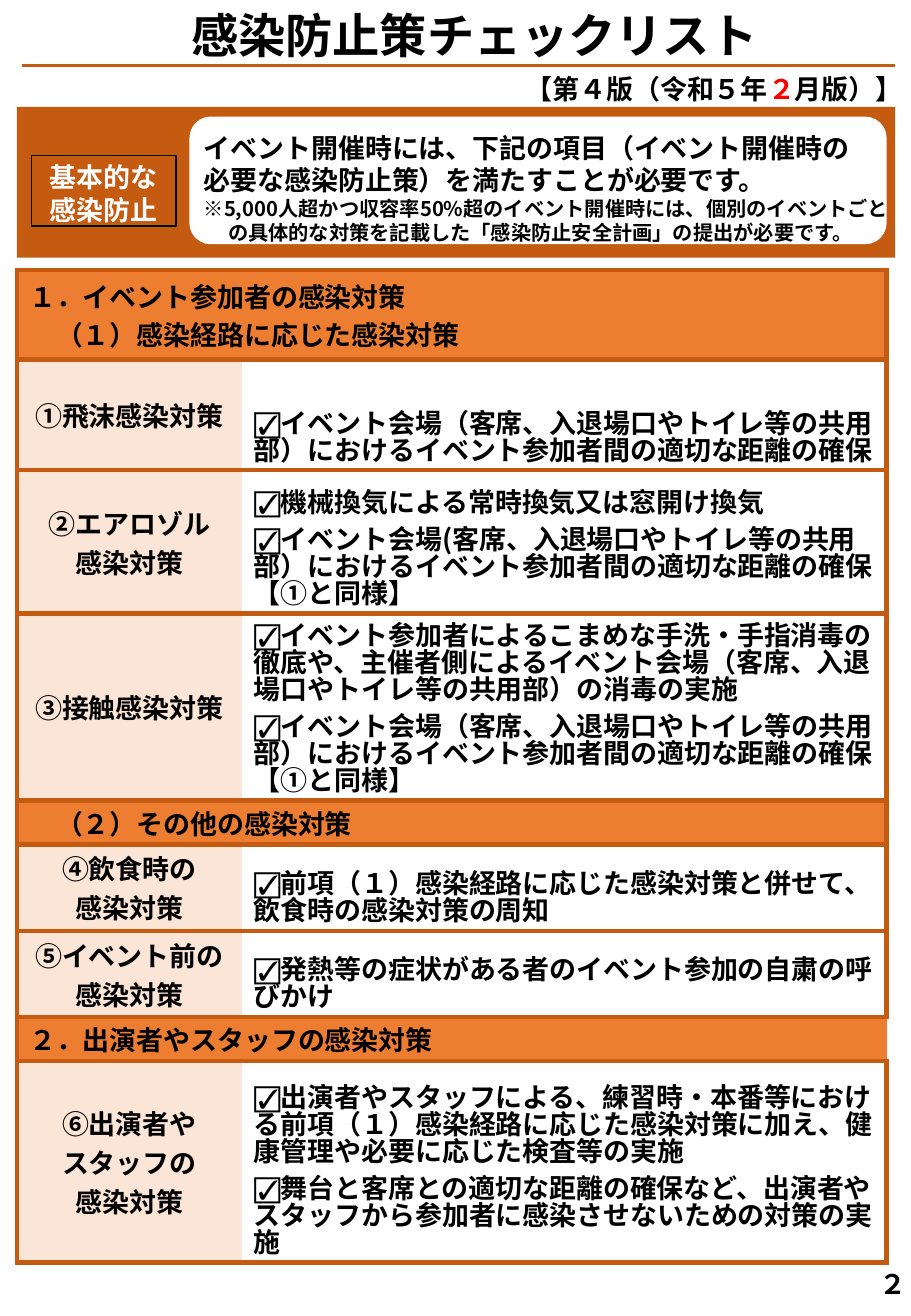
from lxml.etree import SubElement
from pptx import Presentation
from pptx.dml.color import RGBColor
from pptx.enum.shapes import MSO_CONNECTOR, MSO_SHAPE
from pptx.enum.text import MSO_ANCHOR, PP_ALIGN
from pptx.oxml.ns import qn
from pptx.util import Inches, Pt

FONT = "Noto Sans CJK JP"
BLACK = RGBColor(0x00, 0x00, 0x00)
WHITE = RGBColor(0xFF, 0xFF, 0xFF)
RED = RGBColor(0xFF, 0x00, 0x00)
BROWN = RGBColor(0xC5, 0x5A, 0x11)
ORANGE = RGBColor(0xED, 0x7D, 0x31)
PEACH = RGBColor(0xFB, 0xE5, 0xD6)

CENTRED = {"alignment": PP_ALIGN.CENTER}
TIGHT = {"line_spacing": Pt(19.3)}
MEASURE = {"line_spacing": Pt(16), "space_after": Pt(6)}


def add_para(frame, spans, formats, size=16, color=BLACK):
    """Append a paragraph; spans is a string or a list of (text, color)."""
    para = frame.paragraphs[0]
    if para.runs:
        para = frame.add_paragraph()
    for name, value in formats.items():
        setattr(para, name, value)
    if isinstance(spans, str):
        spans = [(spans, color)]
    for text, span_color in spans:
        span = para.add_run()
        span.text = text
        for name, value in {"name": FONT, "size": Pt(size), "bold": True}.items():
            setattr(span.font, name, value)
        span.font.color.rgb = span_color
        SubElement(span.font._element, qn("a:ea"), typeface=FONT)
    return para


def style_cell(cell, fill, sides, anchor=MSO_ANCHOR.MIDDLE):
    """Fill a cell and rule the named sides (letters of LRTB)."""
    cell.vertical_anchor = anchor
    cell.margin_top = cell.margin_bottom = Inches(0.02)
    properties = cell._tc.get_or_add_tcPr()
    for side in "LRTB":
        line = SubElement(properties, qn(f"a:ln{side}"), w=str(Pt(3)))
        if side in sides:
            solid = SubElement(line, qn("a:solidFill"))
            SubElement(solid, qn("a:srgbClr"), val=str(BROWN))
        else:
            SubElement(line, qn("a:noFill"))
    cell.fill.solid()
    cell.fill.fore_color.rgb = fill


deck = Presentation()
deck.slide_width, deck.slide_height = Inches(7.5), Inches(10.83)
page = deck.slides.add_slide(deck.slide_layouts[6])

# Checklist tables: top, then rows of (height, heading or label lines, measures)
tables = [
    (2.22, [
        (0.74, ["１．イベント参加者の感染対策", "　（１）感染経路に応じた感染対策"], []),
        (0.91, ["①飛沫感染対策"], [
            "☑イベント会場（客席、入退場口やトイレ等の共用部）におけるイベント参加者間の適切な距離の確保"]),
        (1.18, ["②エアロゾル", "感染対策"], [
            "☑機械換気による常時換気又は窓開け換気",
            "☑イベント会場(客席、入退場口やトイレ等の共用部）におけるイベント参加者間の適切な距離の確保【①と同様】"]),
        (1.54, ["③接触感染対策"], [
            "☑イベント参加者によるこまめな手洗・手指消毒の徹底や、主催者側によるイベント会場（客席、入退場口やトイレ等の共用部）の消毒の実施",
            "☑イベント会場（客席、入退場口やトイレ等の共用部）におけるイベント参加者間の適切な距離の確保【①と同様】"]),
    ]),
    (6.59, [
        (0.36, ["　（２）その他の感染対策"], []),
        (0.71, ["④飲食時の", "感染対策"], [
            "☑前項（１）感染経路に応じた感染対策と併せて、飲食時の感染対策の周知"]),
        (0.71, ["⑤イベント前の感染対策"], [
            "☑発熱等の症状がある者のイベント参加の自粛の呼びかけ"]),
        (0.36, ["２．出演者やスタッフの感染対策"], []),
        (1.66, ["⑥出演者や", "スタッフの", "感染対策"], [
            "☑出演者やスタッフによる、練習時・本番等における前項（１）感染経路に応じた感染対策に加え、健康管理や必要に応じた検査等の実施",
            "☑舞台と客席との適切な距離の確保など、出演者やスタッフから参加者に感染させないための対策の実施"]),
    ]),
]
for top, rows in tables:
    height = sum(row[0] for row in rows)
    table = page.shapes.add_table(len(rows), 2, Inches(0.14), Inches(top),
                                  Inches(7.16), Inches(height)).table
    table.first_row = table.horz_banding = False
    table.columns[0].width, table.columns[1].width = Inches(1.85), Inches(5.31)
    for index, (row_height, lines, measures) in enumerate(rows):
        table.rows[index].height = Inches(row_height)
        left, right = table.cell(index, 0), table.cell(index, 1)
        if measures:
            style_cell(left, PEACH, "LTB")
            style_cell(right, WHITE, "RTB", MSO_ANCHOR.BOTTOM)
        else:
            left.merge(right)
            style_cell(left, ORANGE, "LRTB" if index == 0 else "LTB")
            style_cell(right, ORANGE, "RTB" if index == 0 else "TB")
        for line in lines:
            add_para(left.text_frame, line, CENTRED if measures else {})
        for measure in measures:
            add_para(right.text_frame, measure, MEASURE)

# Banner: brown band, white panel and outlined label
banner = []
for kind, left, top, width, height, fill in [
    (MSO_SHAPE.RECTANGLE, 0.14, 0.88, 7.23, 1.24, BROWN),
    (MSO_SHAPE.ROUNDED_RECTANGLE, 1.56, 0.96, 5.74, 1.05, WHITE),
    (MSO_SHAPE.RECTANGLE, 0.26, 1.28, 1.19, 0.58, None),
]:
    shape = page.shapes.add_shape(kind, Inches(left), Inches(top), Inches(width), Inches(height))
    shape.shadow.inherit = False
    if fill is None:
        shape.fill.background()
        shape.line.color.rgb = BLACK
        shape.line.width = Pt(1)
    else:
        shape.fill.solid()
        shape.fill.fore_color.rgb = fill
        shape.line.fill.background()
    banner.append(shape)

label = banner[-1].text_frame
label.vertical_anchor = MSO_ANCHOR.MIDDLE
label.margin_left, label.margin_right = Inches(0.15), Inches(0)
label.margin_top, label.margin_bottom = Inches(0.04), Inches(0)
for line in ["基本的な", "感染防止"]:
    add_para(label, line, TIGHT | {"alignment": PP_ALIGN.LEFT}, color=WHITE)

# Text boxes
frames = {}
for name, left, top, width, height in [
    ("notice", 1.58, 1.03, 5.84, 1.09),
    ("title", -0.23, 0, 8.27, 0.57),
    ("edition", 4.13, 0.54, 3.5, 0.37),
    ("number", 7.06, 10.38, 0.59, 0.37),
]:
    box = page.shapes.add_textbox(Inches(left), Inches(top), Inches(width), Inches(height))
    box.text_frame.word_wrap = True
    frames[name] = box.text_frame

for line in ["イベント開催時には、下記の項目（イベント開催時の", "必要な感染防止策）を満たすことが必要です。"]:
    add_para(frames["notice"], line, TIGHT)
remark = add_para(
    frames["notice"],
    "※5,000人超かつ収容率50%超のイベント開催時には、個別のイベントごとの具体的な対策を記載した「感染防止安全計画」の提出が必要です。",
    {"line_spacing": Pt(14.4)}, size=12)
indent = remark._p.get_or_add_pPr()
indent.set("marL", str(Inches(0.2)))
indent.set("indent", str(Inches(-0.2)))

add_para(frames["title"], "感染防止策チェックリスト", CENTRED | {"line_spacing": Pt(34)}, size=28)
add_para(frames["edition"], [("【第４版（令和５年", BLACK), ("２", RED), ("月版）】", BLACK)],
         CENTRED | {"line_spacing": Pt(20)})
frames["number"].vertical_anchor = MSO_ANCHOR.MIDDLE
add_para(frames["number"], "２", CENTRED | TIGHT)

rule = page.shapes.add_connector(MSO_CONNECTOR.STRAIGHT, Inches(0.18), Inches(0.54),
                                 Inches(7.37), Inches(0.54))
rule.line.color.rgb = BROWN
rule.line.width = Pt(2.25)
SubElement(rule._element.spPr, qn("a:effectLst"))

deck.save("out.pptx")
